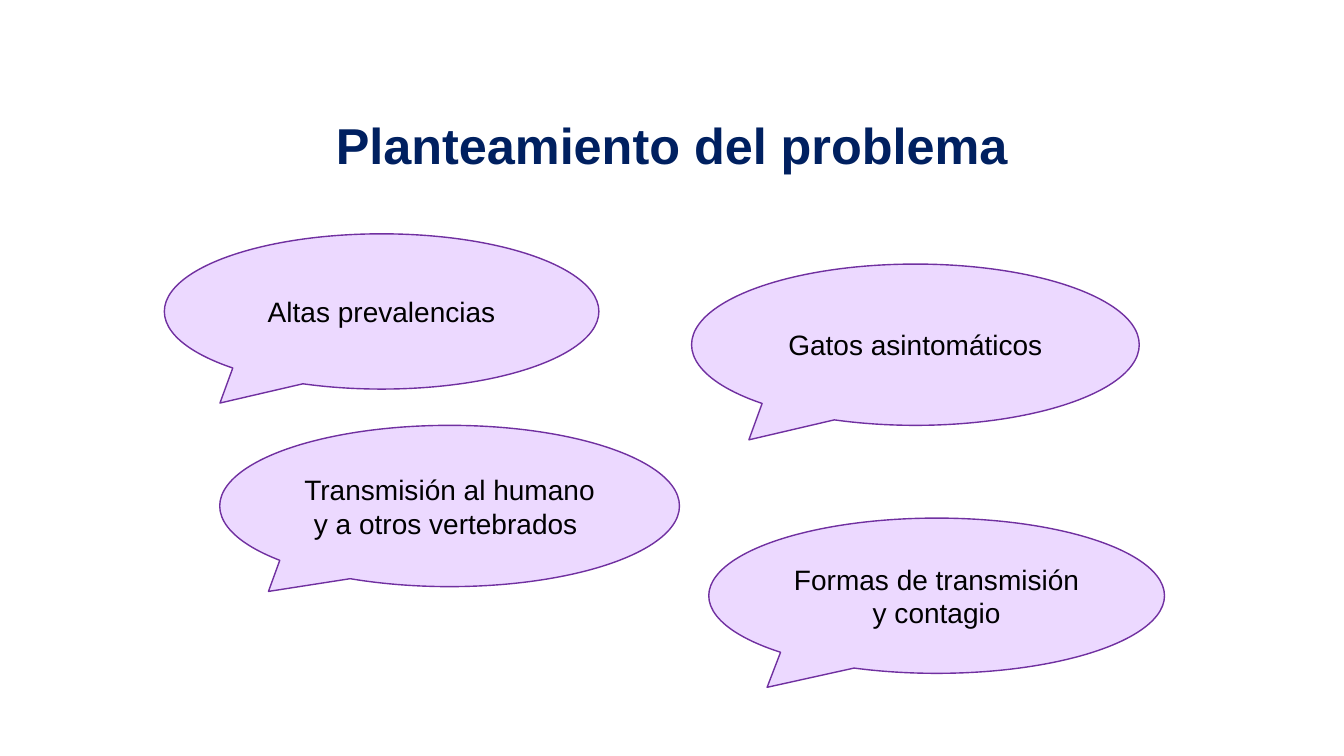
from dataclasses import dataclass

from pptx import Presentation
from pptx import util as u
from pptx.dml import color
from pptx.enum import shapes, text


@dataclass(frozen=True)
class Theme:
    font: str = "Arial"
    title_color: str = "002060"
    body_color: str = "000000"
    bubble_fill: str = "ECD9FF"
    bubble_line: str = "7030A0"
    title_size: int = 36
    body_size: int = 20
    line_width: int = 1


class SlideBuilder:
    def __init__(self, slide, theme):
        self.slide = slide
        self.theme = theme

    def place(self, shape, left, top, width, height):
        shape.left, shape.top = u.Inches(left), u.Inches(top)
        shape.width, shape.height = u.Inches(width), u.Inches(height)

    def set_wording(self, shape, wording, size, rgb, bold=False):
        frame = shape.text_frame
        frame.text = wording
        frame.word_wrap = True
        frame.auto_size = text.MSO_AUTO_SIZE.NONE
        frame.vertical_anchor = text.MSO_ANCHOR.MIDDLE
        paragraph = frame.paragraphs[0]
        paragraph.alignment = text.PP_ALIGN.CENTER
        paragraph.line_spacing = 1.0
        paragraph.space_before = u.Pt(0)
        paragraph.font.name = self.theme.font
        paragraph.font.size = u.Pt(size)
        paragraph.font.bold = bold
        paragraph.font.color.rgb = color.RGBColor.from_string(rgb)

    def title(self, wording, *box):
        heading = self.slide.shapes.title
        self.place(heading, *box)
        self.set_wording(heading, wording, self.theme.title_size,
                         self.theme.title_color, bold=True)

    def bubble(self, wording, box, tail=(-0.372, 0.59)):
        bubble = self.slide.shapes.add_shape(
            shapes.MSO_SHAPE.OVAL_CALLOUT, *(u.Inches(length) for length in box))
        bubble.adjustments[0], bubble.adjustments[1] = tail
        bubble.shadow.inherit = False
        bubble.fill.solid()
        bubble.fill.fore_color.rgb = color.RGBColor.from_string(self.theme.bubble_fill)
        bubble.line.color.rgb = color.RGBColor.from_string(self.theme.bubble_line)
        bubble.line.width = u.Pt(self.theme.line_width)
        self.set_wording(bubble, wording, self.theme.body_size, self.theme.body_color)


def main():
    deck = Presentation()
    deck.slide_width, deck.slide_height = u.Inches(13.33), u.Inches(7.5)
    title_only = deck.slide_layouts[5]
    builder = SlideBuilder(deck.slides.add_slide(title_only), Theme())

    builder.title("Planteamiento del problema", 0.36, 1.08, 12.61, 0.71)
    builder.bubble("Transmisión al humano y a otros vertebrados ",
                   (2.18, 4.22, 4.56, 1.6), tail=(-0.394, 0.53))
    builder.bubble("Gatos asintomáticos", (6.86, 2.62, 4.44, 1.6))
    builder.bubble("Formas de transmisión y contagio", (7.03, 5.14, 4.52, 1.54))
    builder.bubble("Altas prevalencias", (1.63, 2.32, 4.31, 1.54))

    deck.save("out.pptx")


if __name__ == "__main__":
    main()
